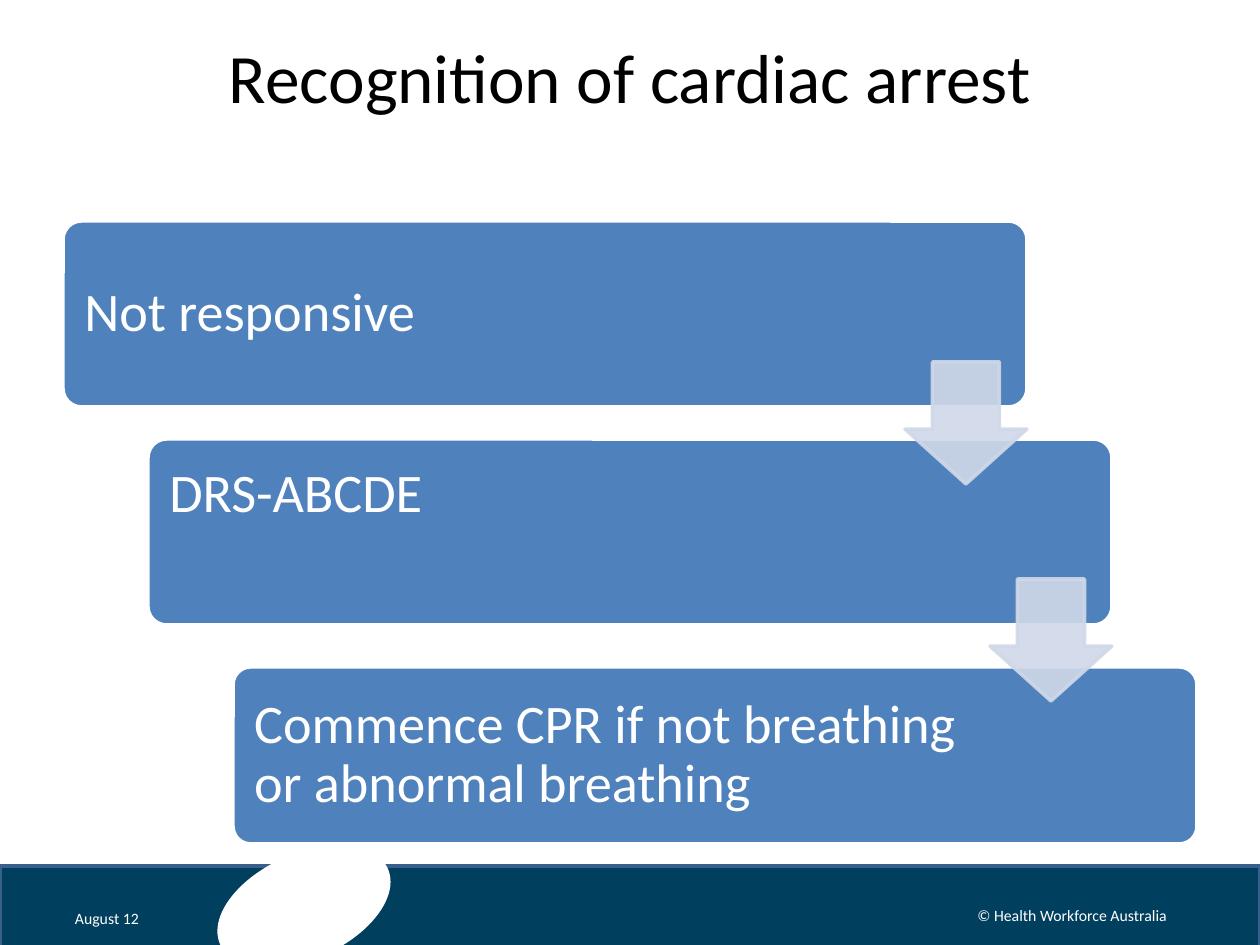
from lxml import etree
from pptx import Presentation
from pptx.dml.color import RGBColor
from pptx.enum.shapes import MSO_SHAPE
from pptx.enum.text import MSO_ANCHOR, PP_ALIGN
from pptx.oxml.ns import qn
from pptx.util import Emu, Pt

PX = 914400 // 126
LEFT, CENTER = PP_ALIGN.LEFT, PP_ALIGN.CENTER
TOP, MIDDLE = MSO_ANCHOR.TOP, MSO_ANCHOR.MIDDLE
COLORS = {"navy": "003F5E", "edge": "3A5F8C", "step": "4F81BD",
          "arrow": "D0D8E8", "white": "FFFFFF", "black": "000000"}


def add_shape(kind, bounds, fill, line=None, adjustments=(), alpha=None):
    shape = page.shapes.add_shape(kind, *[Emu(n * PX) for n in bounds])
    shape.shadow.inherit = False
    for index, value in enumerate(adjustments):
        shape.adjustments[index] = value
    shape.fill.solid()
    shape.fill.fore_color.rgb = RGBColor.from_string(COLORS[fill])
    if line:
        shape.line.color.rgb = RGBColor.from_string(COLORS[line])
        shape.line.width = Pt(2)
    else:
        shape.line.fill.background()
    if alpha:
        for color in shape.element.spPr.iter(qn("a:srgbClr")):
            etree.SubElement(color, qn("a:alpha"), val=str(alpha * 1000))
    return shape


def write(box, text, size, color="white", align=LEFT, anchor=MIDDLE,
          insets=(12, 6, 12, 6), spacing=None):
    frame = box.text_frame
    frame.word_wrap = True
    frame.vertical_anchor = anchor
    (frame.margin_left, frame.margin_top,
     frame.margin_right, frame.margin_bottom) = [Emu(n * PX) for n in insets]
    para = frame.paragraphs[0]
    para.alignment = align
    if spacing:
        para.line_spacing = spacing
    span = para.add_run()
    span.text = text
    span.font.name = "Calibri"
    span.font.size = Pt(size)
    span.font.color.rgb = RGBColor.from_string(COLORS[color])


deck = Presentation()
deck.slide_width, deck.slide_height = Emu(1260 * PX), Emu(945 * PX)
page = deck.slides.add_slide(deck.slide_layouts[6])

# Footer band with a tilted ellipse
add_shape(MSO_SHAPE.RECTANGLE, (0, 866, 1260, 82), "navy", "edge")
ellipse = add_shape(MSO_SHAPE.OVAL, (212, 854, 184, 105), "white")
ellipse.rotation = 335.7

# Title
title = page.shapes.add_textbox(*[Emu(n * PX) for n in (63, 34, 1134, 157)])
write(title, "Recognition of cardiac arrest", 39.6, "black", CENTER, TOP,
      insets=(12, 0, 12, 0))

# Steps, each shifted right of the one above
STEP_LEFT, STEP_SHIFT, STEP_WIDTH = 63, 85, 964
steps = [
    ("Not responsive", 221, 186, MIDDLE, 16),
    ("DRS-ABCDE", 439, 186, TOP, 21),
    ("Commence CPR if not breathing or abnormal breathing", 667, 177, MIDDLE, 16),
]
for index, (text, top, height, anchor, top_inset) in enumerate(steps):
    step = add_shape(MSO_SHAPE.ROUNDED_RECTANGLE,
                     (STEP_LEFT + index * STEP_SHIFT, top, STEP_WIDTH, height),
                     "step", "white", [0.1])
    write(step, text, 31, anchor=anchor, spacing=0.9,
          insets=(16, top_inset, 223, 16))

# Arrows between the steps
for index, top in enumerate((362, 579)):
    add_shape(MSO_SHAPE.DOWN_ARROW, (905 + index * STEP_SHIFT, top, 122, 122),
              "arrow", "arrow", [0.55, 0.45], alpha=90)

# Footer text
for text, bounds, align in (
        ("August 12", (63, 900, 101, 36), LEFT),
        ("© Health Workforce Australia", (937, 890, 270, 50), CENTER)):
    footer = page.shapes.add_textbox(*[Emu(n * PX) for n in bounds])
    write(footer, text, 9, align=align)

deck.save("out.pptx")
